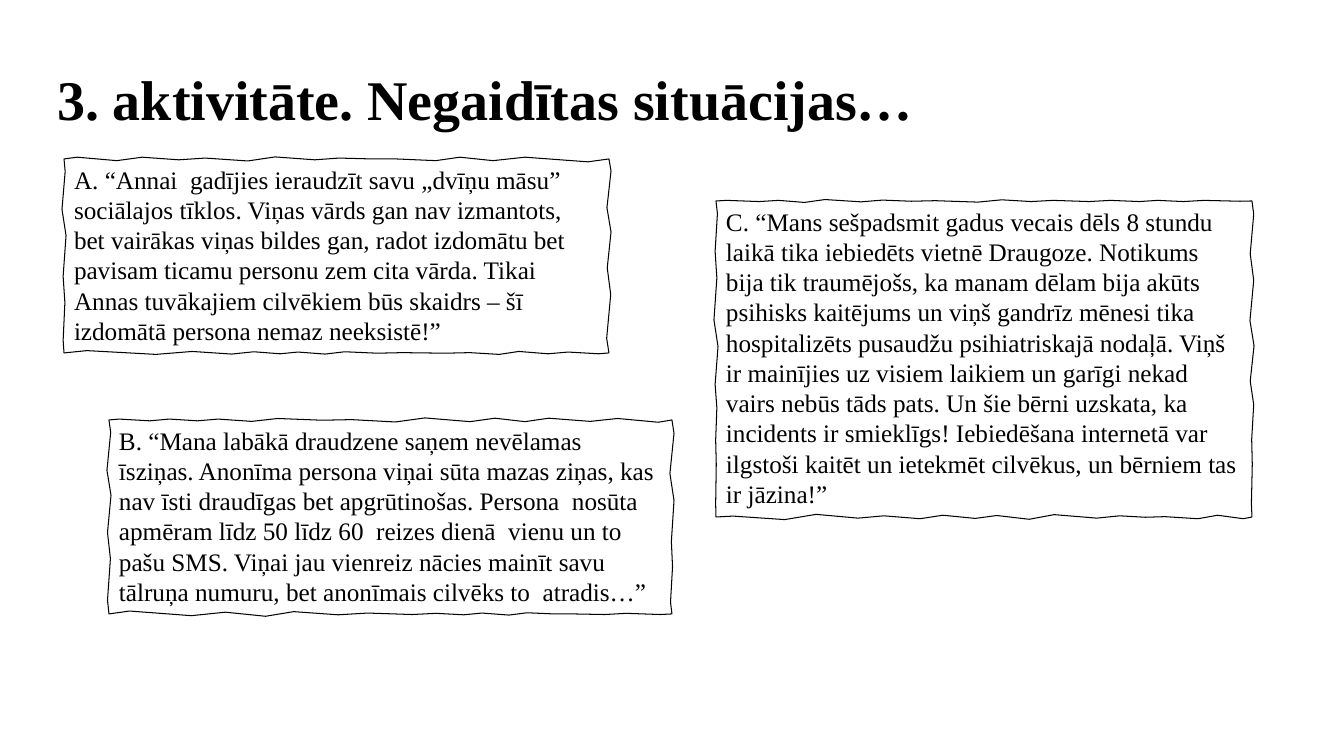
from dataclasses import dataclass

from pptx import Presentation
from pptx.dml.color import RGBColor
from pptx.enum.text import MSO_ANCHOR, MSO_AUTO_SIZE, PP_ALIGN
from pptx.util import Pt

LEFT = PP_ALIGN.LEFT
TOP, MIDDLE = MSO_ANCHOR.TOP, MSO_ANCHOR.MIDDLE
NO_FIT = MSO_AUTO_SIZE.NONE

WIDE, HIGH = 1344, 756
PX = 12192000 / WIDE
CRESTS = (0.2, 0.8)  # where a wave peaks, as parts of its length
PEAK = 0.29  # height of a peak, as a part of the swing
PAD_X, PAD_Y, PAD_END = 10, 5, 12


@dataclass(frozen=True)
class Theme:
    font: str = "Times New Roman"
    ink: RGBColor = RGBColor(0, 0, 0)
    head: Pt = Pt(40)
    body: Pt = Pt(18)
    line: Pt = Pt(0.75)


THEME = Theme()

# Each note: box (left, top, right, bottom), text, and its four sides,
# clockwise from the top. A side lists (where a wave ends, its swing).
NOTES = [
    ((64, 159, 609, 353),
     "A. “Annai  gadījies ieraudzīt savu „dvīņu māsu” sociālajos tīklos. "
     "Viņas vārds gan nav izmantots, bet vairākas viņas bildes gan, radot "
     "izdomātu bet pavisam ticamu personu zem cita vārda. Tikai Annas "
     "tuvākajiem cilvēkiem būs skaidrs – šī izdomātā persona nemaz "
     "neeksistē!”",
     [[(130, 6), (191, 3), (262, 7), (328, 3), (383, 0), (449, 6), (504, 6),
       (609, 10)],
      [(220, -7), (280, -6), (353, -8)],
      [(558, -3), (509, -5), (460, -1), (388, -1), (334, -4), (289, -3),
       (245, -4), (179, -5), (64, -8)],
      [(290, 3), (222, 7), (159, 4)]]),
    ((109, 420, 672, 614),
     "B. “Mana labākā draudzene saņem nevēlamas īsziņas. Anonīma persona "
     "viņai sūta mazas ziņas, kas nav īsti draudīgas bet apgrūtinošas. "
     "Persona  nosūta apmēram līdz 50 līdz 60  reizes dienā  vienu un to "
     "pašu SMS. Viņai jau vienreiz nācies mainīt savu tālruņa numuru, bet "
     "anonīmais cilvēks to  atradis…”",
     [[(160, 3), (207, 3), (263, 5), (337, 1), (410, 7), (485, 6), (535, 6),
       (604, 5), (672, 8)],
      [(487, -7), (555, -2), (614, -5)],
      [(615, -2), (563, 0), (518, -4), (473, -3), (427, -2), (353, -3),
       (279, -8), (212, -6), (109, -10)],
      [(545, 5), (483, 7), (420, 6)]]),
    ((716, 201, 1252, 517),
     "C. “Mans sešpadsmit gadus vecais dēls 8 stundu laikā tika iebiedēts "
     "vietnē Draugoze. Notikums bija tik traumējošs, ka manam dēlam bija "
     "akūts psihisks kaitējums un viņš gandrīz mēnesi tika hospitalizēts "
     "pusaudžu psihiatriskajā nodaļā. Viņš ir mainījies uz visiem laikiem "
     "un garīgi nekad vairs nebūs tāds pats. Un šie bērni uzskata, ka "
     "incidents ir smieklīgs! Iebiedēšana internetā var ilgstoši kaitēt un "
     "ietekmēt cilvēkus, un bērniem tas ir jāzina!”",
     [[(770, 2), (813, 5), (873, 3), (921, 1), (992, 4), (1041, 2),
       (1101, 2), (1149, 2), (1192, 2), (1252, 1)],
      [(267, -6), (334, -7), (393, -6), (451, -1), (517, -2)],
      [(1209, -6), (1154, -1), (1111, -4), (1040, -8), (986, -5), (932, -6),
       (872, -4), (802, -9), (716, -3)],
      [(451, 1), (397, 3), (334, 7), (264, 3), (201, 5)]]),
]


def px(num):
    return round(num * PX)


def style(para, size, bold=False):
    para.alignment = LEFT
    font = para.font
    font.name, font.size, font.bold = THEME.font, size, bold
    font.color.rgb = THEME.ink


def wave(start, waves):
    """Return (along, off) peaks; each wave leaves opposite to the last."""
    points = []
    lead = -waves[0][1]
    for end, swing in waves:
        for part, pull in zip(CRESTS, (lead, swing)):
            points.append((start + (end - start) * part, pull * PEAK))
        start, lead = end, -swing
    return points + [(start, 0)]


def outline(box, sides):
    left, top, right, bottom = box
    upper, east, lower, west = sides
    points = [(x, top + off) for x, off in wave(left, upper)]
    points += [(right + off, y) for y, off in wave(top, east)]
    points += [(x, bottom + off) for x, off in wave(right, lower)]
    points += [(left + off, y) for y, off in wave(bottom, west)]
    return [(px(x), px(y)) for x, y in points[:-1]]


def add_title(slide, text):
    title = slide.shapes.title
    title.left, title.top = px(47), px(35)
    title.width, title.height = px(1205), px(134)
    frame = title.text_frame
    frame.text = text
    frame.word_wrap = True
    frame.auto_size = NO_FIT
    frame.vertical_anchor = MIDDLE
    para = frame.paragraphs[0]
    para.line_spacing = 0.9
    style(para, THEME.head, bold=True)


def add_note(slide, box, text, sides):
    # Wavy frame
    left, top, right, bottom = box
    pen = slide.shapes.build_freeform(px(left), px(top))
    pen.add_line_segments(outline(box, sides))
    note = pen.convert_to_shape()
    note.shadow.inherit = False
    note.fill.background()
    note.line.color.rgb = THEME.ink
    note.line.width = THEME.line
    # Text, inset from the straight box rather than the wave crests
    frame = note.text_frame
    frame.text = text
    frame.word_wrap = True
    frame.auto_size = NO_FIT
    frame.vertical_anchor = TOP
    frame.margin_left = px(left + PAD_X) - note.left
    frame.margin_top = px(top + PAD_Y) - note.top
    frame.margin_right = note.left + note.width - px(right - PAD_END)
    frame.margin_bottom = note.top + note.height - px(bottom - PAD_Y)
    style(frame.paragraphs[0], THEME.body)


def main():
    deck = Presentation()
    deck.slide_width, deck.slide_height = px(WIDE), px(HIGH)
    slide = deck.slides.add_slide(deck.slide_layouts[5])
    add_title(slide, "3. aktivitāte. Negaidītas situācijas…")
    for box, text, sides in NOTES:
        add_note(slide, box, text, sides)
    deck.save("out.pptx")


if __name__ == "__main__":
    main()
